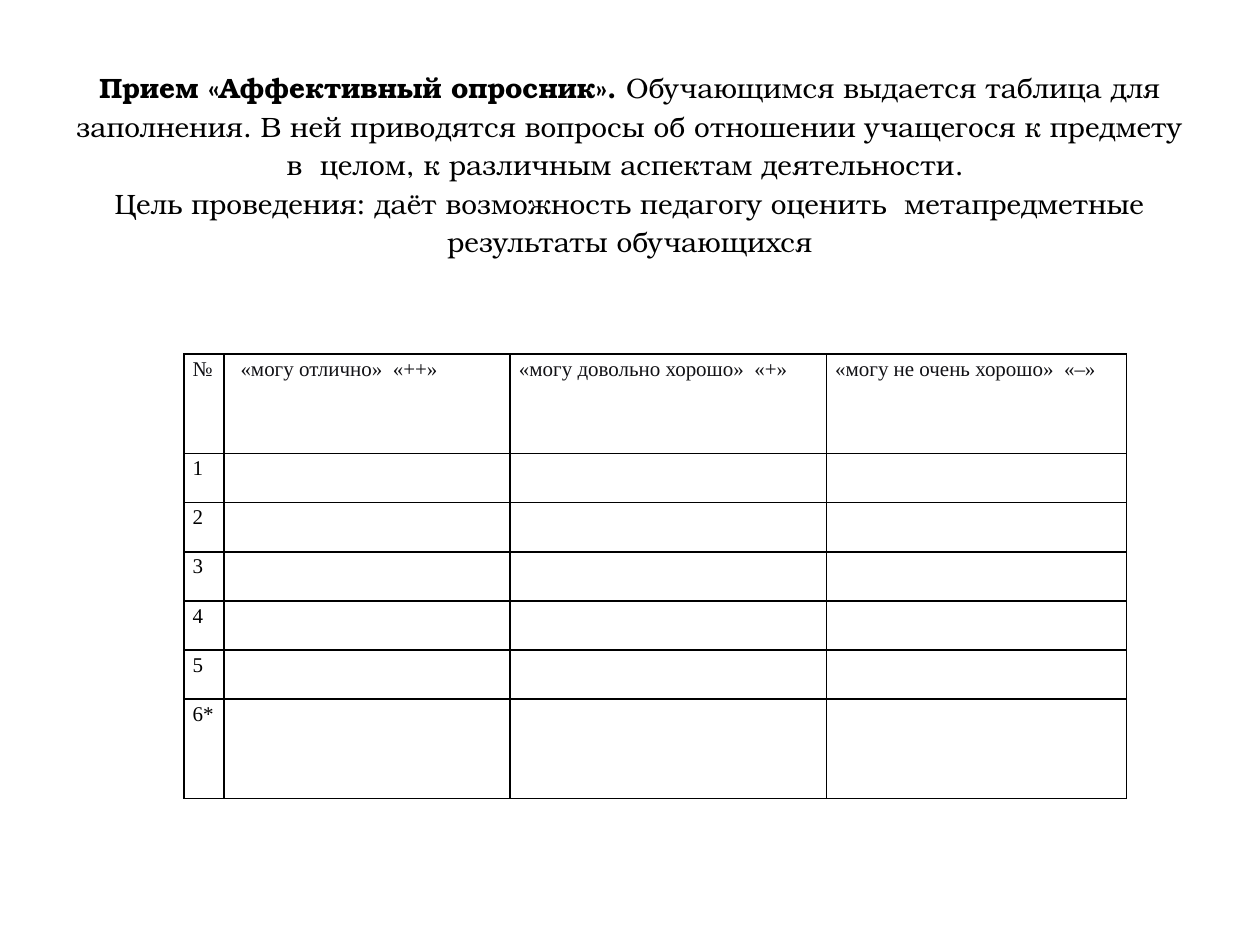
from lxml import etree
from pptx import Presentation
from pptx.dml.color import RGBColor
from pptx.enum import text
from pptx.oxml import ns
from pptx.util import Inches, Pt

BLACK, INK, WHITE = "000000", "111115", "FFFFFF"


def add_text(paragraph, words, size=12, font="Times New Roman", color=BLACK,
             bold=False, align=text.PP_ALIGN.LEFT):
    paragraph.alignment = align
    paragraph.line_spacing = 1.15
    run = paragraph.add_run()
    run.text = words
    run.font.size = Pt(size)
    run.font.name = font
    run.font.bold = bold
    run.font.color.rgb = RGBColor.from_string(color)


def style_cell(cell):
    cell.margin_left = cell.margin_right = Inches(0.07)
    cell.margin_top = cell.margin_bottom = 0
    props = cell._tc.get_or_add_tcPr()
    for side in ("lnL", "lnR", "lnT", "lnB"):
        border = etree.SubElement(props, ns.qn(f"a:{side}"), w=str(Pt(1)))
        fill = etree.SubElement(border, ns.qn("a:solidFill"))
        etree.SubElement(fill, ns.qn("a:srgbClr"), val=BLACK)
    cell.fill.solid()
    cell.fill.fore_color.rgb = RGBColor.from_string(WHITE)


prs = Presentation()
prs.slide_width, prs.slide_height = Inches(10), Inches(7.5)
slide = prs.slides.add_slide(prs.slide_layouts[6])

# Description of the technique
intro = slide.shapes.add_textbox(Inches(0.5), Inches(0.3), Inches(9), Inches(2.19)).text_frame
intro.word_wrap = True
intro.vertical_anchor = text.MSO_ANCHOR.TOP
intro.margin_top = Inches(0.22)
heading = intro.paragraphs[0]
look = dict(size=16, font="TeX Gyre Bonum", align=text.PP_ALIGN.CENTER)
add_text(heading, "Прием «Аффективный опросник».", bold=True, **look)
add_text(heading, " Обучающимся выдается таблица для заполнения. В ней приводятся "
         "вопросы об отношении учащегося к предмету в  целом, к различным аспектам "
         "деятельности. ", **look)
heading.add_line_break()
add_text(heading, "Цель проведения: даёт возможность педагогу оценить  метапредметные "
         "результаты обучающихся", **look)

# Questionnaire table
widths = [0.32, 2.27, 2.51, 2.38]
heights = [0.79] + [0.39] * 5 + [0.79]
grid = slide.shapes.add_table(len(heights), len(widths), Inches(1.46), Inches(2.81),
                              Inches(sum(widths)), Inches(sum(heights))).table
grid.first_row = grid.horz_banding = False
for column, width in zip(grid.columns, widths):
    column.width = Inches(width)
for row, height in zip(grid.rows, heights):
    row.height = Inches(height)
for cell in grid.iter_cells():
    style_cell(cell)

# Rating headings
ratings = ["«могу отлично»  «++»", "«могу довольно хорошо»  «+»",
           "«могу не очень хорошо»  «–» "]
for col, rating in enumerate(ratings, 1):
    add_text(grid.cell(0, col).text_frame.paragraphs[0], rating, color=INK)
first_rating = grid.cell(0, 1).text_frame.paragraphs[0]
first_rating._p.get_or_add_pPr().set("marL", str(Inches(0.06)))

# Question numbers
for row, number in enumerate(["№", "1", "2", "3", "4", "5", "6*"]):
    add_text(grid.cell(row, 0).text_frame.paragraphs[0], number,
             color=BLACK if row else INK)

prs.save("out.pptx")
